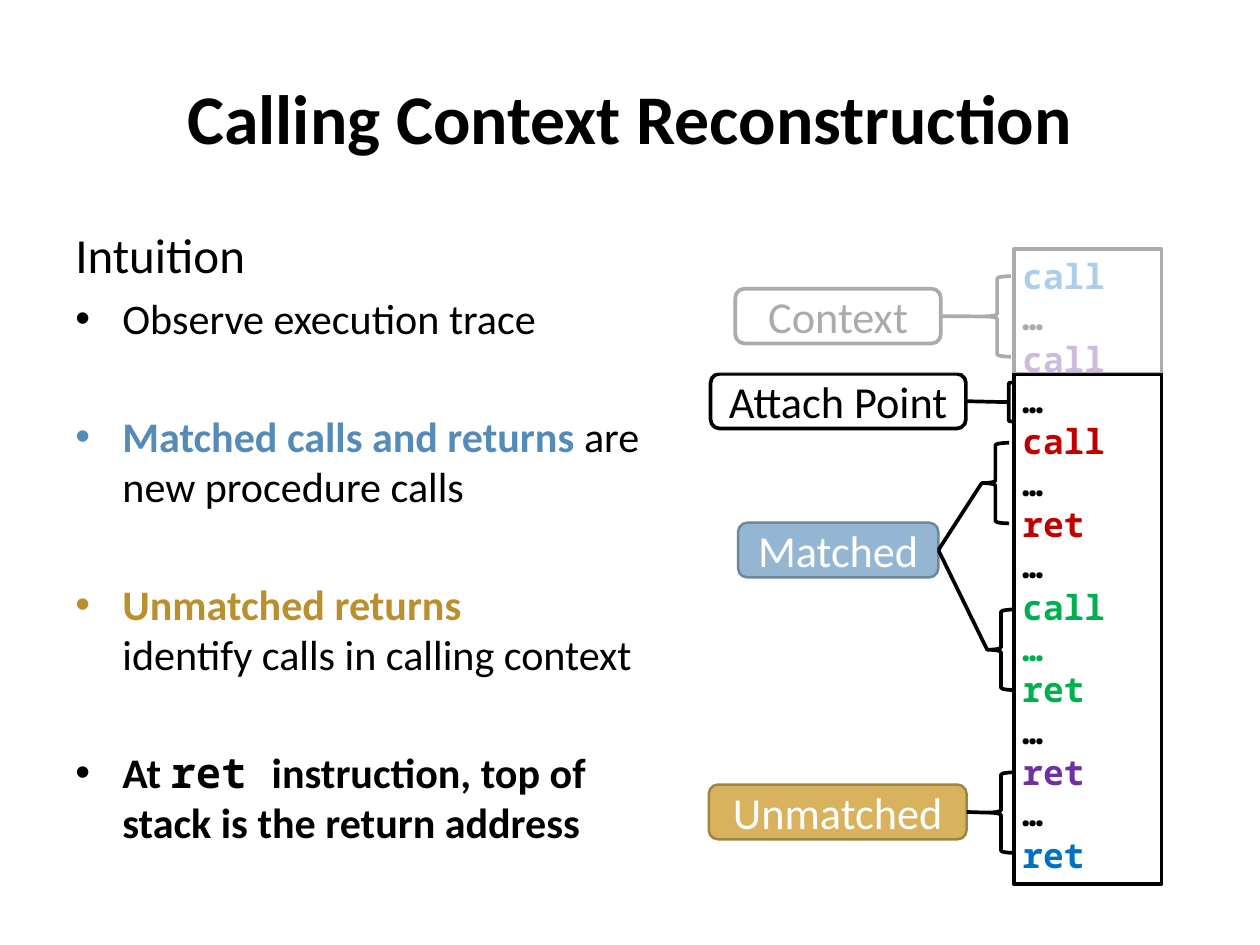
"""Build the slide on calling context reconstruction."""
from dataclasses import dataclass

from lxml.etree import SubElement
from pptx import Presentation
from pptx.dml.color import RGBColor
from pptx.enum.shapes import MSO_CONNECTOR, MSO_SHAPE
from pptx.enum.text import MSO_ANCHOR, PP_ALIGN
from pptx.oxml.ns import qn
from pptx.util import Cm, Pt

BLACK = RGBColor(0x00, 0x00, 0x00)
WHITE = RGBColor(0xFF, 0xFF, 0xFF)
BLUE = RGBColor(0x00, 0x70, 0xC0)
PURPLE = RGBColor(0x70, 0x30, 0xA0)
RED = RGBColor(0xC0, 0x00, 0x00)
GREEN = RGBColor(0x00, 0xB0, 0x50)
SKY = RGBColor(0x94, 0xB6, 0xD2)
SLATE = RGBColor(0x6D, 0x87, 0x9B)
GOLD = RGBColor(0xD8, 0xB2, 0x5C)
BRONZE = RGBColor(0xA0, 0x84, 0x44)
STEEL = RGBColor(0x55, 0x8B, 0xB8)
OCHRE = RGBColor(0xBA, 0x8F, 0x2D)
SANS, MONO = "Calibri", "Noto Sans Mono"
LABEL_HIGH = 1.57


@dataclass(frozen=True)
class Brace:
    left: float
    top: float
    wide: float = 0.79
    high: float = 2.31


@dataclass(frozen=True)
class Label:
    text: str
    left: float
    top: float
    wide: float
    braces: tuple[Brace, ...]
    fill: RGBColor = WHITE
    edge: RGBColor = BLACK
    ink: RGBColor = BLACK
    weight: float = 3


@dataclass(frozen=True)
class Piece:
    text: str
    ink: RGBColor = BLACK
    bold: bool = False
    font: str = SANS


@dataclass(frozen=True)
class Point:
    pieces: tuple[Piece, ...]
    gap: float = 55.3


LABELS = (
    Label("Attach Point", 20.37, 10.72, 7.32, (Brace(28.78, 10.97, 0.28, 1.12),)),
    Label("Matched", 21.16, 14.99, 5.74, (Brace(28.14, 12.7), Brace(28.3, 17.48)),
          SKY, SLATE, WHITE, 2),
    Label("Unmatched", 20.32, 22.5, 7.39, (Brace(28.3, 22.15),),
          GOLD, BRONZE, WHITE, 2),
    Label("Context", 21.08, 8.28, 5.89, (Brace(28.19, 7.92),)),
)

POINTS = (
    Point((Piece("Observe execution trace"),), 8),
    Point((Piece("Matched calls and returns ", STEEL, True),
           Piece("are new procedure calls"))),
    Point((Piece("Unmatched returns", OCHRE, True), Piece("\n"),
           Piece("identify calls in calling context"))),
    Point((Piece("At ", bold=True), Piece("ret ", bold=True, font=MONO),
           Piece("instruction, top of stack is the return address", bold=True))),
)

TRACE = (
    ("call", BLUE), ("…", BLACK), ("call", PURPLE), ("…", BLACK),
    ("call", RED), ("…", BLACK), ("ret", RED), ("…", BLACK),
    ("call", GREEN), ("…", GREEN), ("ret", GREEN), ("…", BLACK),
    ("ret", PURPLE), ("…", BLACK), ("ret", BLUE),
)


def write(para, text: str, *, size: float, ink: RGBColor = BLACK,
          bold: bool = False, font: str = SANS) -> None:
    """Add one formatted run, or a line break."""
    if text == "\n":
        para.add_line_break()
        return
    run = para.add_run()
    run.text = text
    run.font.size = Pt(size)
    run.font.name = font
    run.font.bold = bold
    run.font.color.rgb = ink


def add_form(slide, kind, left: float, top: float, wide: float, high: float, *,
             fill: RGBColor | None = None, edge: RGBColor | None = BLACK,
             weight: float = 3):
    """Draw a preset shape with its fill and edge."""
    form = slide.shapes.add_shape(kind, Cm(left), Cm(top), Cm(wide), Cm(high))
    form.shadow.inherit = False
    if fill is None:
        form.fill.background()
    else:
        form.fill.solid()
        form.fill.fore_color.rgb = fill
    if edge is None:
        form.line.fill.background()
    else:
        form.line.color.rgb = edge
        form.line.width = Pt(weight)
    return form


def add_line(slide, left: float, top: float, right: float, base: float):
    """Draw a plain black line."""
    line = slide.shapes.add_connector(
        MSO_CONNECTOR.STRAIGHT, Cm(left), Cm(top), Cm(right), Cm(base))
    line.line.color.rgb = BLACK
    line.line.width = Pt(3)
    SubElement(line._element.spPr, qn("a:effectLst"))
    return line


def add_frame(slide, left: float, top: float, wide: float, high: float):
    """Add a wrapping text box and return its frame."""
    frame = slide.shapes.add_textbox(Cm(left), Cm(top), Cm(wide), Cm(high)).text_frame
    frame.word_wrap = True
    frame.margin_left = frame.margin_right = Cm(0.36)
    frame.margin_top = frame.margin_bottom = Cm(0.18)
    return frame


def add_label(slide, label: Label) -> None:
    """Draw a label and join it to its braces."""
    box = add_form(slide, MSO_SHAPE.ROUNDED_RECTANGLE, label.left, label.top,
                   label.wide, LABEL_HIGH, fill=label.fill, edge=label.edge,
                   weight=label.weight)
    box.text_frame.vertical_anchor = MSO_ANCHOR.MIDDLE
    para = box.text_frame.paragraphs[0]
    para.alignment = PP_ALIGN.CENTER
    write(para, label.text, size=36, ink=label.ink)
    for brace in label.braces:
        curl = add_form(slide, MSO_SHAPE.LEFT_BRACE, brace.left, brace.top,
                        brace.wide, brace.high)
        line = add_line(slide, label.left + label.wide, label.top + LABEL_HIGH / 2,
                        brace.left, brace.top + brace.high / 2)
        line.begin_connect(box, 3)
        line.end_connect(curl, 1)


def add_trace(slide) -> None:
    """Draw the column of traced instructions."""
    stack = add_form(slide, MSO_SHAPE.RECTANGLE, 29.06, 7.14, 4.24, 18.21)
    frame = stack.text_frame
    frame.vertical_anchor = MSO_ANCHOR.TOP
    frame.margin_top = Cm(0.18)
    for row, (text, ink) in enumerate(TRACE):
        para = frame.add_paragraph() if row else frame.paragraphs[0]
        para.alignment = PP_ALIGN.LEFT
        para.line_spacing = Pt(33.6)
        write(para, text, size=28, ink=ink, bold=True, font=MONO)


def add_points(slide) -> None:
    """Write the heading and its bullet points."""
    frame = add_frame(slide, 1.8, 6.32, 17.73, 17.88)
    head = frame.paragraphs[0]
    head.line_spacing = Pt(46)
    write(head, "Intuition", size=39.8)
    for point in POINTS:
        para = frame.add_paragraph()
        para.line_spacing = Pt(40.6)
        para.space_before = Pt(point.gap)
        props = para._p.get_or_add_pPr()
        props.set("marL", str(Cm(1.35)))
        props.set("indent", str(-Cm(1.35)))
        tint = SubElement(props, qn("a:buClr"))
        SubElement(tint, qn("a:srgbClr"), val=str(point.pieces[0].ink))
        SubElement(props, qn("a:buFont"), typeface="Arial")
        SubElement(props, qn("a:buChar"), char="•")
        for piece in point.pieces:
            write(para, piece.text, size=34.2, ink=piece.ink,
                  bold=piece.bold, font=piece.font)


def main() -> None:
    """Build and save the slide."""
    deck = Presentation()
    deck.slide_width, deck.slide_height = Cm(36.12), Cm(27.1)
    slide = deck.slides.add_slide(deck.slide_layouts[6])
    title = add_frame(slide, 1.8, 1.09, 32.51, 4.52)
    title.vertical_anchor = MSO_ANCHOR.MIDDLE
    title.paragraphs[0].alignment = PP_ALIGN.CENTER
    write(title.paragraphs[0], "Calling Context Reconstruction", size=56.7, bold=True)
    add_trace(slide)
    add_points(slide)
    for label in LABELS:
        add_label(slide, label)
    add_line(slide, 29.03, 10.72, 33.32, 10.72)
    veil = add_form(slide, MSO_SHAPE.RECTANGLE, 20.12, 6.25, 14.78, 4.45,
                    fill=WHITE, edge=None)
    shade = veil._element.spPr.find(qn("a:solidFill"))[0]
    SubElement(shade, qn("a:alpha"), val="67000")
    deck.save("out.pptx")


if __name__ == "__main__":
    main()
